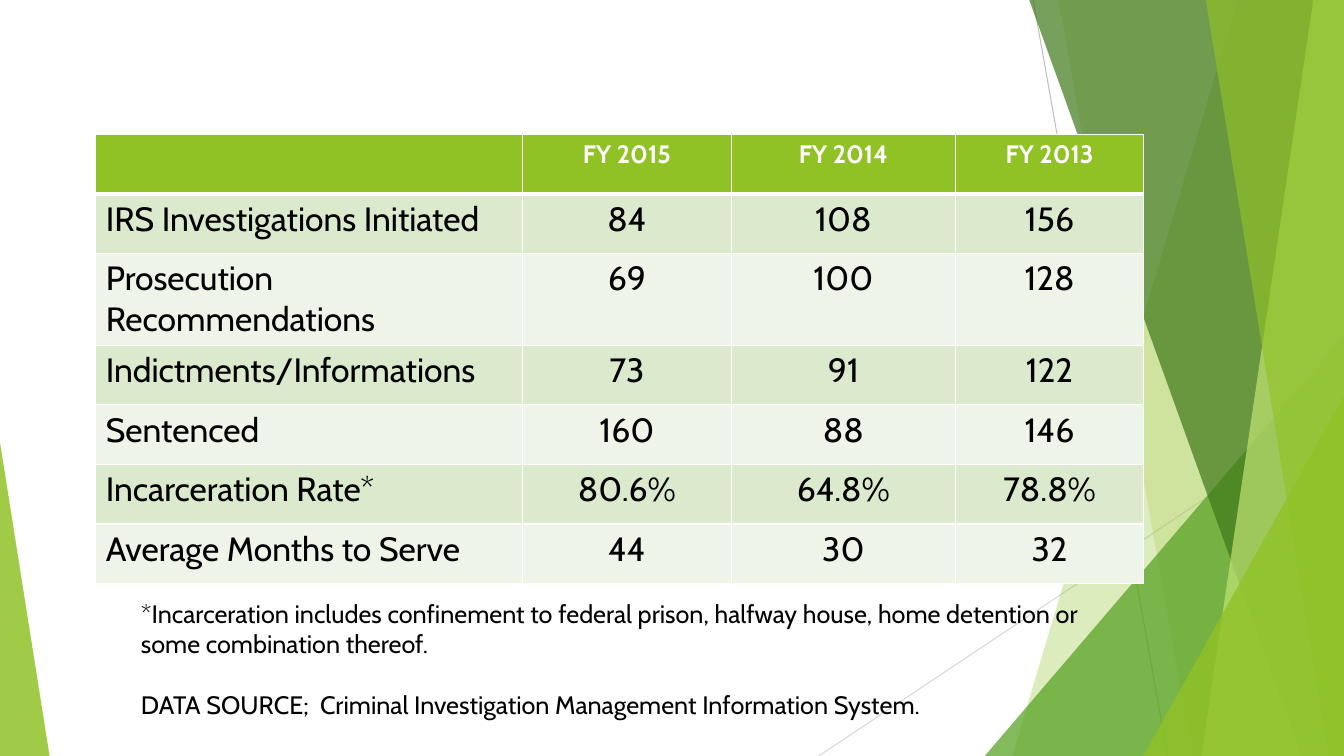
from lxml import etree
from pptx import Presentation
from pptx.dml.color import RGBColor
from pptx.enum.shapes import MSO_CONNECTOR, MSO_SHAPE
from pptx.enum.text import MSO_AUTO_SIZE, PP_ALIGN
from pptx.oxml.ns import qn
from pptx.util import Pt

STRAIGHT = MSO_CONNECTOR.STRAIGHT
TRIANGLE = MSO_SHAPE.ISOSCELES_TRIANGLE
CENTER = PP_ALIGN.CENTER
LEFT = PP_ALIGN.LEFT
FONT = "Cabin"
W, H, TOP = 960, 540, -0.6
COLORS = {
    "lime": "90C226", "green": "54A021", "forest": "3F7819", "pale": "C0E474",
    "band": "DBE9CD", "light": "EEF4E8", "white": "FFFFFF", "black": "000000",
    "gray": "BFBFBF", "silver": "D9D9D9",
}


def rgb(name):
    return RGBColor.from_string(COLORS[name])


def style_paragraph(p, size, color, align=LEFT, bold=False):
    p.alignment = align
    p.font.name = FONT
    p.font.size = Pt(size)
    p.font.bold = bold
    p.font.color.rgb = rgb(color)


prs = Presentation()
prs.slide_width, prs.slide_height = Pt(W), Pt(H)
s = prs.slides.add_slide(prs.slide_layouts[6])

for x1, y1, x2, y2, color in [
    (738, 0, 834, H, "gray"),
    (W, 290, 584.8, H, "silver"),
]:
    line = s.shapes.add_connector(STRAIGHT, Pt(x1), Pt(y1), Pt(x2), Pt(y2))
    line.line.color.rgb = rgb(color)
    line.line.width = Pt(0.75)
    etree.SubElement(line._element.spPr, qn("a:effectLst"))

facets = [
    ("band", 884.2, 723, "lime", 30),
    ("band", 756, 851.8, "lime", 20),
    ("triangle", (703.4, 240, 256.6, 300), 1, "green", 72),
    ("band", 735, 929.6, "forest", 70),
    ("band", 938.2, 858.2, "pale", 70),
    ("band", 861.2, 949, "lime", 65),
    ("triangle", (816.6, 283, 143.4, 257), 1, "lime", 80),
    ("triangle", (0, 316, 35.4, 224), 0, "lime", 85),
]
for kind, a, b, color, opacity in facets:
    if kind == "band":
        outline = s.shapes.build_freeform(Pt(a), Pt(TOP))
        outline.add_line_segments(
            [(Pt(W), Pt(TOP)), (Pt(W), Pt(H)), (Pt(b), Pt(H))], close=True)
        sp = outline.convert_to_shape()
    else:
        sp = s.shapes.add_shape(TRIANGLE, *[Pt(v) for v in a])
        sp.adjustments[0] = b
    sp.shadow.inherit = False
    sp.line.fill.background()
    sp.fill.solid()
    sp.fill.fore_color.rgb = rgb(color)
    clr = sp._element.spPr.find(qn("a:solidFill"))[0]
    etree.SubElement(clr, qn("a:alpha"), val=str(opacity * 1000))

rows = [
    ("", "FY 2015", "FY 2014", "FY 2013"),
    ("IRS Investigations Initiated", "84", "108", "156"),
    ("Prosecution Recommendations", "69", "100", "128"),
    ("Indictments/Informations", "73", "91", "122"),
    ("Sentenced", "160", "88", "146"),
    ("Incarceration Rate*", "80.6%", "64.8%", "78.8%"),
    ("Average Months to Serve", "44", "30", "32"),
]
widths = [304.8, 149.3, 160, 134.5]
row_height = 42.6
table = s.shapes.add_table(
    len(rows), len(widths), Pt(68.4), Pt(95.8),
    Pt(sum(widths)), Pt(row_height * len(rows))).table
for col, width in zip(table.columns, widths):
    col.width = Pt(width)
for i, values in enumerate(rows):
    table.rows[i].height = Pt(row_height)
    header = i == 0
    fill = "lime" if header else ("light", "band")[i % 2]
    for j, value in enumerate(values):
        cell = table.cell(i, j)
        cell.text = value
        cell.fill.solid()
        cell.fill.fore_color.rgb = rgb(fill)
        style_paragraph(cell.text_frame.paragraphs[0], 18 if header else 24,
                        "white" if header else "black",
                        CENTER if j else LEFT, header)
        tc_pr = cell._tc.get_or_add_tcPr()
        for k, side in enumerate("LRTB"):
            thick = (header and side == "B") or (i == 1 and side == "T")
            ln = etree.Element(qn("a:ln" + side), w=str(Pt(3 if thick else 1)))
            solid = etree.SubElement(ln, qn("a:solidFill"))
            etree.SubElement(solid, qn("a:srgbClr"), val=COLORS["white"])
            tc_pr.insert(k, ln)

notes = s.shapes.add_textbox(Pt(93.6), Pt(424), Pt(723.6), Pt(94.4))
tf = notes.text_frame
tf.word_wrap = True
tf.auto_size = MSO_AUTO_SIZE.SHAPE_TO_FIT_TEXT
tf.text = ("*Incarceration includes confinement to federal prison, halfway house, "
           "home detention or some combination thereof.")
source = tf.add_paragraph()
source.text = "DATA SOURCE;  Criminal Investigation Management Information System."
source.space_before = Pt(21.8)
for p in tf.paragraphs:
    style_paragraph(p, 18, "black")

prs.save("out.pptx")
